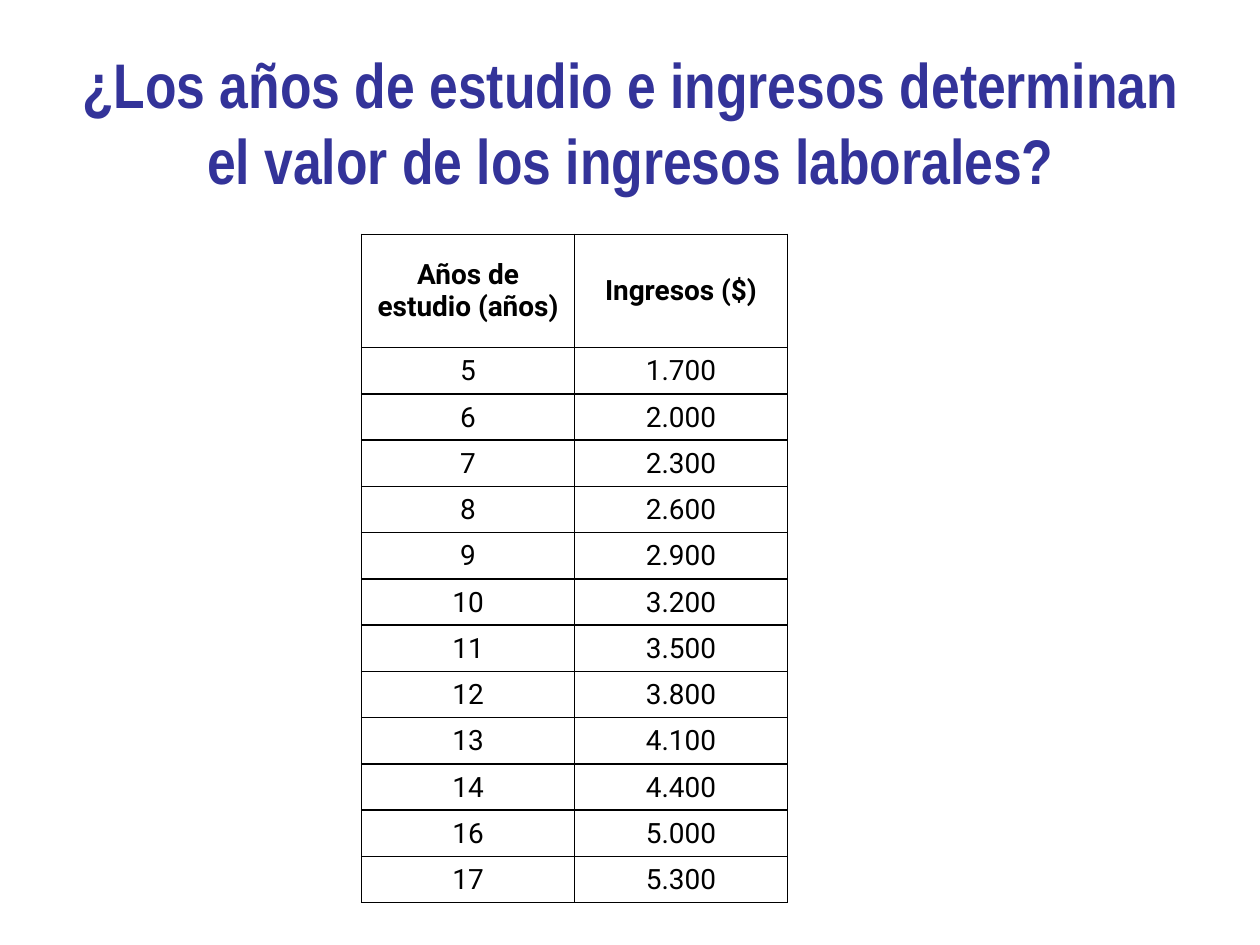
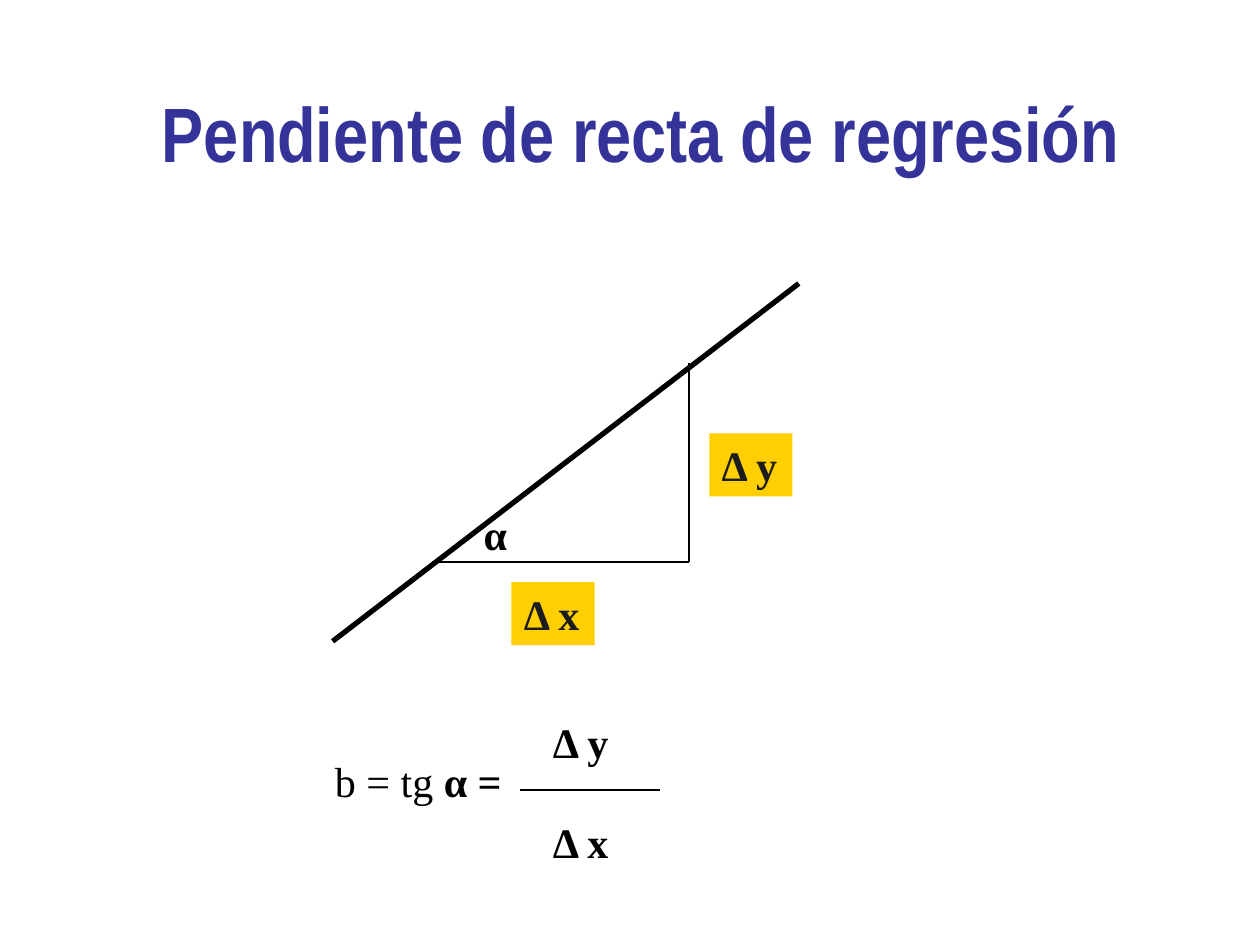
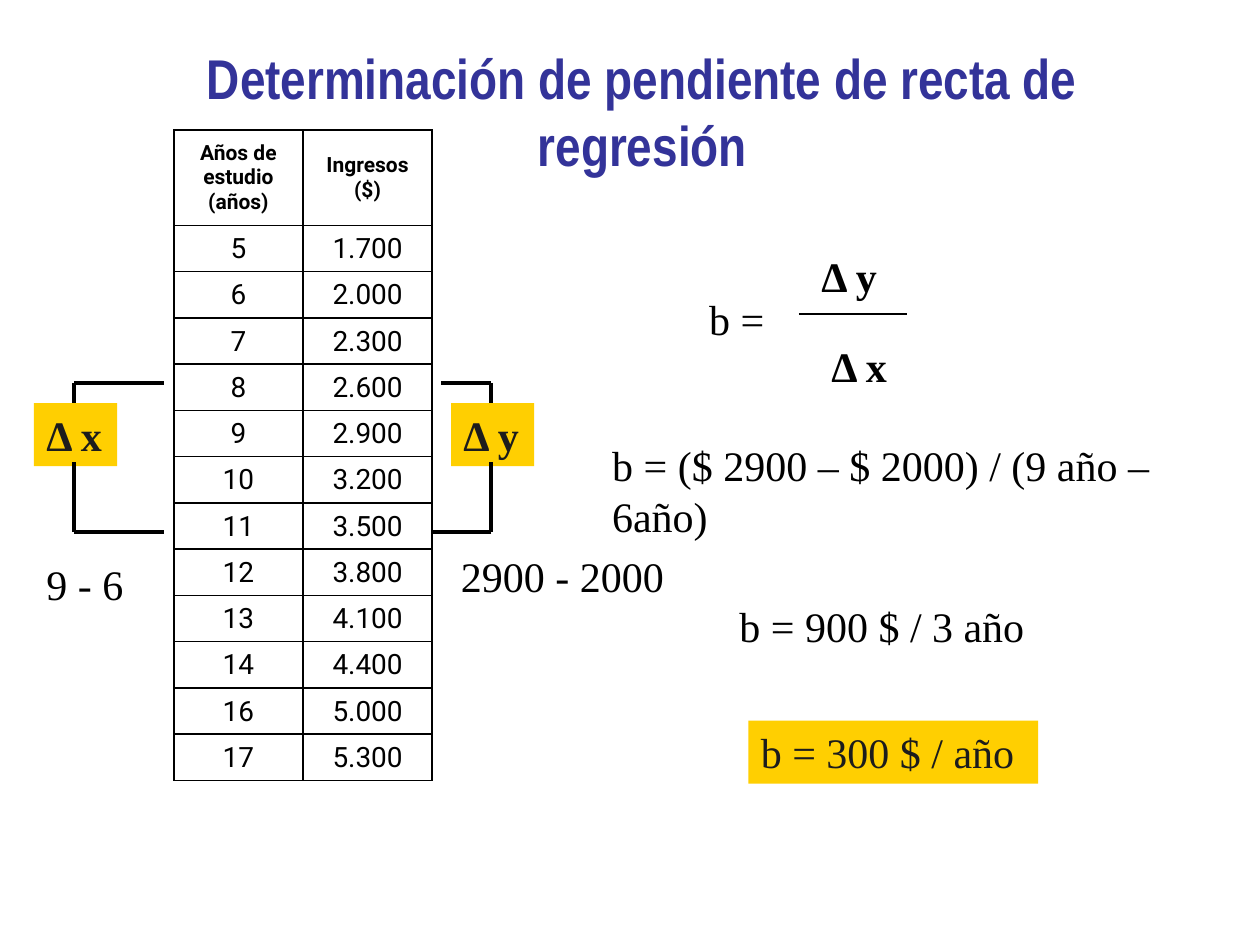
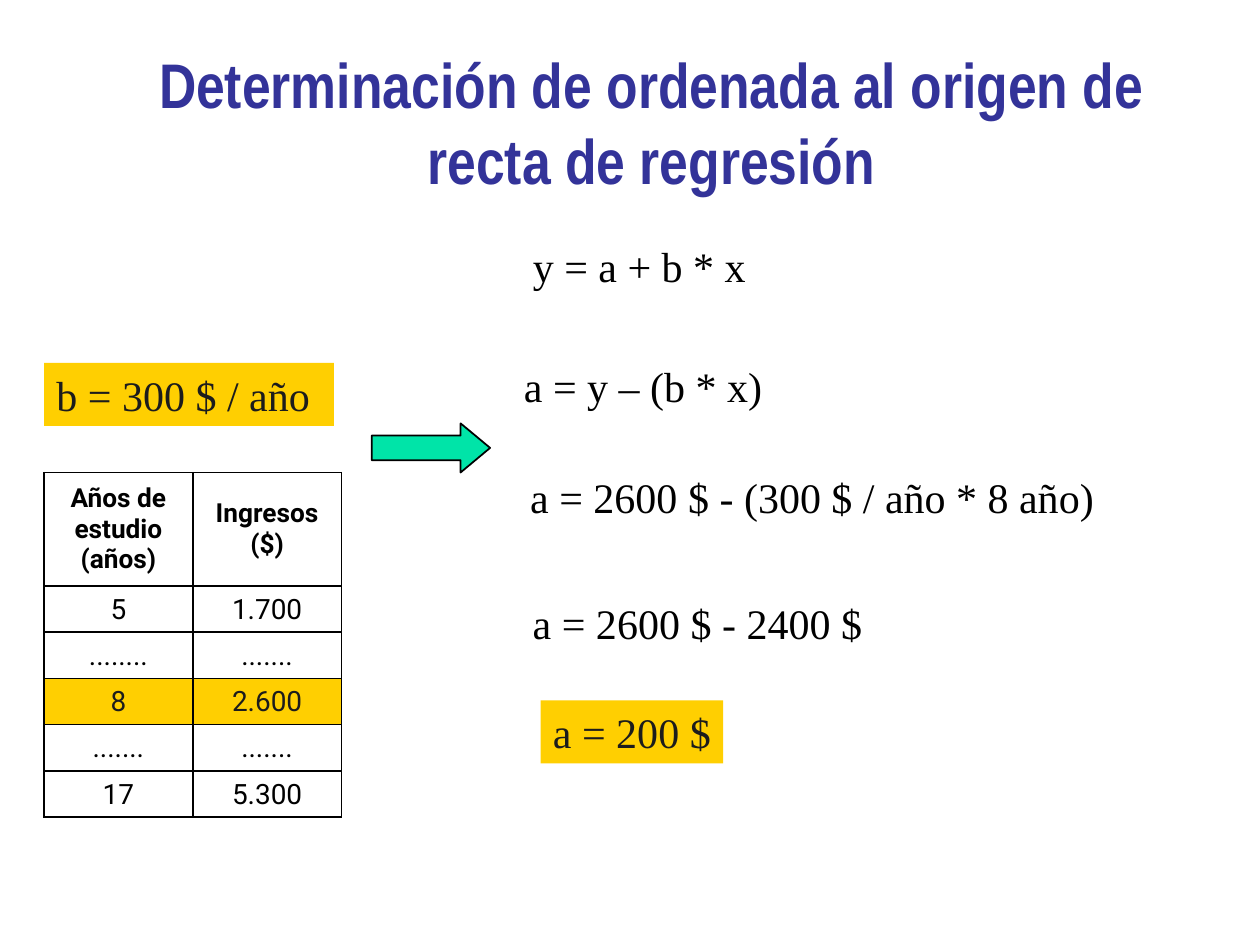
from lxml.etree import SubElement
from pptx import Presentation
from pptx.dml.color import RGBColor
from pptx.enum.shapes import MSO_CONNECTOR, MSO_SHAPE
from pptx.enum.text import MSO_ANCHOR, MSO_AUTO_SIZE, PP_ALIGN
from pptx.oxml.ns import qn
from pptx.util import Inches, Pt

BLUE, GOLD, GREEN, BLACK, DARK = "333399", "FFCF01", "00E4A8", "000000", "1C1C1C"
TITLE_FONT, TABLE_FONT, BODY_FONT = "Arial Narrow", "Roboto", "Times New Roman"
LABEL_H = 0.5

HEADER = ("Años de estudio (años)", "Ingresos ($)")
INCOMES = [("5", "1.700"), ("6", "2.000"), ("7", "2.300"), ("8", "2.600"),
           ("9", "2.900"), ("10", "3.200"), ("11", "3.500"), ("12", "3.800"),
           ("13", "4.100"), ("14", "4.400"), ("16", "5.000"), ("17", "5.300")]
EXCERPT = [INCOMES[0], ("........", "......."), INCOMES[3],
           (".......", "......."), INCOMES[-1]]

# Titles: text, size, left, top, width
# Tables: rows, (left, top, width, height), header height, header size, marked row
# Lines: from, to, width
# Brackets: spine x, upper arm x, lower arm x
# Labels: text, left, top, width, style ("b" bold, "m" marked in gold)
SLIDES = [
    {"title": ("¿Los años de estudio e ingresos determinan el valor de los "
               "ingresos laborales?", 36, 0.43, 0.36, 9.15),
     "table": (INCOMES, (2.87, 1.86, 3.38, 5.3), 0.9, 16, None)},
    {"title": ("Pendiente de recta de regresión", 44, 0.67, 0.21, 8.84),
     "lines": [((6.34, 2.25), (2.64, 5.09), 3),
               ((3.43, 4.46), (5.47, 4.46), 1),
               ((5.47, 4.46), (5.47, 2.88), 1),
               ((4.13, 6.27), (5.24, 6.27), 1)],
     "labels": [("Δ x", 4.06, 4.62, 0.66, "bm"),
                ("Δ y", 5.63, 3.44, 0.66, "bm"),
                ("α", 3.74, 3.99, 0.39, "b"),
                (("b = tg ", "α ="), 2.56, 5.95, 1.61, ""),
                ("Δ y", 4.29, 5.64, 0.66, "b"),
                ("Δ x", 4.29, 6.43, 0.66, "b")]},
    {"title": ("Determinación de pendiente de recta de regresión",
               32, 0.68, 0.21, 8.84),
     "table": (INCOMES, (1.38, 1.03, 2.05, 5.16), 0.76, 12, None),
     "brackets": [(0.59, 1.3, 1.3), (3.9, 3.5, 3.43)],
     "lines": [((6.34, 2.49), (7.2, 2.49), 1)],
     "labels": [("Δ x", 0.27, 3.2, 0.66, "bm"),
                ("Δ y", 3.58, 3.2, 0.66, "bm"),
                ("9 - 6", 0.27, 4.38, 0.81, ""),
                ("2900 - 2000", 3.56, 4.32, 1.81, ""),
                ("b =", 5.53, 2.28, 0.81, ""),
                ("Δ y", 6.42, 1.94, 0.66, "b"),
                ("Δ x", 6.5, 2.65, 0.66, "b"),
                ("b = ($ 2900 – $ 2000) / (9 año – 6año)", 4.76, 3.44, 5.3, ""),
                ("b = 900 $ / 3 año", 5.77, 4.72, 2.46, ""),
                ("b = 300 $ / año", 5.94, 5.72, 2.3, "m")]},
    {"title": ("Determinación de ordenada al origen de recta de regresión",
               36, 0.75, 0.36, 8.84),
     "table": (EXCERPT, (0.35, 3.75, 2.36, 2.73), 0.9, 15, 3),
     "arrow": (2.95, 3.36, 0.94, 0.39),
     "labels": [("b = 300 $ / año", 0.35, 2.88, 2.3, "m"),
                ("y = a + b * x", 4.13, 1.86, 1.89, ""),
                ("a = y – (b * x)", 4.06, 2.81, 2.2, ""),
                ("a = 2600 $ - (300 $ / año * 8 año)", 4.11, 3.69, 4.8, ""),
                ("a = 2600 $ - 2400 $", 4.13, 4.69, 2.9, ""),
                ("a = 200 $", 4.29, 5.56, 1.45, "m")]},
]


def rgb(color):
    return RGBColor.from_string(color)


def paint(filled, color):
    filled.fill.solid()
    filled.fill.fore_color.rgb = rgb(color)


def style(p, font, size, color, bold=False, align=PP_ALIGN.LEFT):
    p.alignment = align
    p.font.name, p.font.size, p.font.bold = font, Pt(size), bold
    p.font.color.rgb = rgb(color)


def add_title(s, text, size, left, top, width):
    box = s.shapes.add_textbox(*map(Inches, (left, top, width, 1.25)))
    tf = box.text_frame
    tf.word_wrap = True
    tf.vertical_anchor = MSO_ANCHOR.BOTTOM
    tf.text = text
    style(tf.paragraphs[0], TITLE_FONT, size, BLUE, True, PP_ALIGN.CENTER)


def add_label(s, text, left, top, width, look):
    """Add a one-line text; of a pair of texts the second is bold."""
    place = [Inches(v) for v in (left, top, width, LABEL_H)]
    marked = "m" in look
    if marked:
        sp = s.shapes.add_shape(MSO_SHAPE.RECTANGLE, *place)
        sp.shadow.inherit = False
        paint(sp, GOLD)
        sp.line.fill.background()
    else:
        sp = s.shapes.add_textbox(*place)
    tf = sp.text_frame
    tf.word_wrap = False
    tf.auto_size = MSO_AUTO_SIZE.SHAPE_TO_FIT_TEXT
    tf.vertical_anchor = MSO_ANCHOR.TOP
    p = tf.paragraphs[0]
    style(p, BODY_FONT, 24, DARK if marked else BLACK, "b" in look)
    for i, part in enumerate([text] if isinstance(text, str) else text):
        r = p.add_run()
        r.text = part
        if i:
            r.font.bold = True


def add_line(s, start, end, width):
    ln = s.shapes.add_connector(MSO_CONNECTOR.STRAIGHT,
                                *map(Inches, (*start, *end)))
    ln.line.color.rgb = rgb(BLACK)
    ln.line.width = Pt(width)
    SubElement(ln._element.spPr, qn("a:effectLst"))


def add_bracket(s, spine, upper, lower):
    """Join two table rows by arms and a spine that leaves room for a label."""
    for row_y, label_y, arm in ((3.04, 3.2, upper), (4.22, 3.67, lower)):
        add_line(s, (spine, row_y), (spine, label_y), 2.25)
        add_line(s, (spine, row_y), (arm, row_y), 2.25)


def add_borders(cell):
    tc_pr = cell._tc.get_or_add_tcPr()
    for side in ("lnL", "lnR", "lnT", "lnB"):
        ln = SubElement(tc_pr, qn(f"a:{side}"), w=str(Pt(1)))
        SubElement(SubElement(ln, qn("a:solidFill")), qn("a:srgbClr"), val=BLACK)


def add_income_table(s, body, place, header_h, header_size, marked_row):
    rows = [HEADER, *body]
    table = s.shapes.add_table(len(rows), 2, *map(Inches, place)).table
    table.first_row = table.horz_banding = False
    width, height = place[2:]
    for col in table.columns:
        col.width = Inches(width / 2)
    for i, texts in enumerate(rows):
        head, marked = i == 0, i == marked_row
        table.rows[i].height = Inches(
            header_h if head else (height - header_h) / len(body))
        for cell, text in zip(table.rows[i].cells, texts):
            cell.text = text
            cell.vertical_anchor = MSO_ANCHOR.MIDDLE if head else MSO_ANCHOR.BOTTOM
            style(cell.text_frame.paragraphs[0], TABLE_FONT,
                  header_size if head else 16, DARK if marked else BLACK,
                  head, PP_ALIGN.CENTER)
            add_borders(cell)
            if marked:
                paint(cell, GOLD)
            else:
                cell.fill.background()


def add_arrow(s, *place):
    sp = s.shapes.add_shape(MSO_SHAPE.RIGHT_ARROW, *map(Inches, place))
    sp.adjustments[0], sp.adjustments[1] = 0.5, 0.6
    sp.shadow.inherit = False
    paint(sp, GREEN)
    sp.line.color.rgb = rgb(BLACK)
    sp.line.width = Pt(1)


def main():
    prs = Presentation()
    prs.slide_width, prs.slide_height = Inches(10), Inches(7.5)
    for content in SLIDES:
        s = prs.slides.add_slide(prs.slide_layouts[6])
        add_title(s, *content["title"])
        if "table" in content:
            add_income_table(s, *content["table"])
        for line in content.get("lines", []):
            add_line(s, *line)
        for label in content["labels"] if "labels" in content else []:
            add_label(s, *label)
        for bracket in content.get("brackets", []):
            add_bracket(s, *bracket)
        if "arrow" in content:
            add_arrow(s, *content["arrow"])
    prs.save("out.pptx")


if __name__ == "__main__":
    main()
